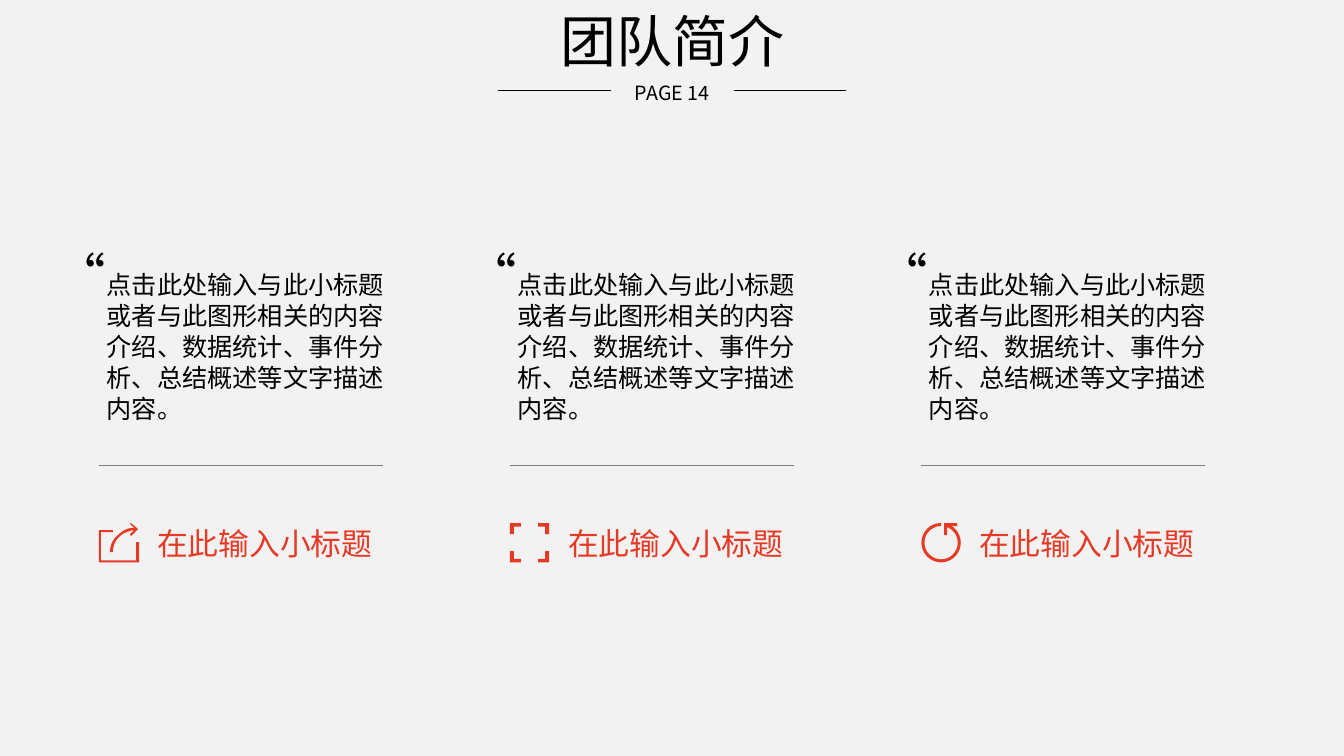
import math
from pptx import Presentation
from pptx.dml.color import RGBColor
from pptx.enum import shapes, text
from pptx.oxml import ns
from pptx.util import Cm, Pt
from lxml import etree

COLORS = {"paper": "F2F2F2", "ink": "000000", "rule": "808080", "accent": "E63A26"}
BODY_FONT = "Noto Sans CJK SC"
TITLE_FONT = "Noto Sans CJK JP"
LINE_RATIO = 1.22
ICON_GRID = 39
DESCRIPTION = "点击此处输入与此小标题或者与此图形相关的内容介绍、数据统计、事件分析、总结概述等文字描述内容。"
SUBTITLE = "在此输入小标题"


def rgb(name):
    return RGBColor.from_string(COLORS[name])


def style_run(run, size, color, font):
    run.font.size = Pt(size)
    run.font.color.rgb = rgb(color)
    run.font.name = font
    etree.SubElement(run.font._element, ns.qn("a:ea"), typeface=font)


def add_label(slide, box, wording, size, color="ink", wrap=True, align=text.PP_ALIGN.LEFT):
    label = slide.shapes.add_textbox(*box)
    frame = label.text_frame
    frame.text = wording
    frame.word_wrap = wrap
    frame.auto_size = text.MSO_AUTO_SIZE.SHAPE_TO_FIT_TEXT
    paragraph = frame.paragraphs[0]
    paragraph.alignment = align
    paragraph.line_spacing = Pt(round(size * LINE_RATIO, 1))
    style_run(paragraph.runs[0], size, color, BODY_FONT)


def add_rule(slide, left, top, width, color):
    rule = slide.shapes.add_connector(
        shapes.MSO_CONNECTOR.STRAIGHT, left, top, left + width, top)
    rule.line.color.rgb = rgb(color)
    rule.line.width = Pt(0.5)
    etree.SubElement(rule._element.spPr, ns.qn("a:effectLst"))


def curve(start, pull_out, pull_in, end, steps=12):
    points = []
    for step in range(steps + 1):
        t = step / steps
        weights = ((1 - t) ** 3, 3 * t * (1 - t) ** 2, 3 * t * t * (1 - t), t ** 3)
        corners = (start, pull_out, pull_in, end)
        points.append(tuple(sum(w * c[axis] for w, c in zip(weights, corners))
                            for axis in (0, 1)))
    return points


def arc(radius, first, last, steps=60):
    angles = [math.radians(first + (last - first) * i / steps) for i in range(steps + 1)]
    return [(20 + radius * math.cos(a), 19.5 + radius * math.sin(a)) for a in angles]


def share_icon():
    frame = [(0, 7), (14, 7), (14, 9), (2, 9), (2, 37), (37, 37),
             (37, 19), (40, 19), (40, 39), (0, 39)]
    arrow = ([(31, 1), (32, 0), (39, 6), (32, 13), (31, 11)]
             + curve((35, 7), (29, 8), (24, 10), (20, 14))
             + curve((20, 14), (16, 18), (14, 23), (14, 29))
             + curve((11, 29), (11, 22), (14, 16), (19, 12))
             + curve((19, 12), (23, 8), (28, 5), (33, 5))
             + [(35, 5)])
    return [frame, arrow]


def focus_icon():
    corner = [(0, 0), (11, 0), (11, 3.5), (4, 3.5), (4, 11), (0, 11)]
    return [[(abs(flip_x - x), abs(flip_y - y)) for x, y in corner]
            for flip_x in (0, ICON_GRID) for flip_y in (0, ICON_GRID)]


def refresh_icon():
    return [[(23, 0), (36, 0), (36, 3), (30, 3)] + arc(19.5, -52, 270)
            + arc(16.5, 270, -66) + [(26, 4), (26, 12), (23, 12)]]


def add_icon(slide, left, top, size, contours):
    unit = size / ICON_GRID
    scaled = [[(x * unit, y * unit) for x, y in contour] for contour in contours]
    builder = slide.shapes.build_freeform(*scaled[0][0], scale=1.0)
    builder.add_line_segments(scaled[0][1:], close=True)
    for contour in scaled[1:]:
        builder.move_to(*contour[0])
        builder.add_line_segments(contour[1:], close=True)
    icon = builder.convert_to_shape(left, top)
    icon.shadow.inherit = False
    icon.fill.solid()
    icon.fill.fore_color.rgb = rgb("accent")
    icon.line.fill.background()


def add_header(slide, left, top, width, height):
    title = slide.shapes.title
    title.left, title.top, title.width, title.height = left, top, width, height
    frame = title.text_frame
    frame.text = "团队简介"
    frame.word_wrap = False
    frame.auto_size = text.MSO_AUTO_SIZE.NONE
    frame.vertical_anchor = text.MSO_ANCHOR.MIDDLE
    paragraph = frame.paragraphs[0]
    paragraph.alignment = text.PP_ALIGN.CENTER
    paragraph.line_spacing = 0.9
    style_run(paragraph.runs[0], 40, "ink", TITLE_FONT)

    center = left + width // 2
    page_width, rule_width, rule_gap = Cm(4.83), Cm(2.84), Cm(1.55)
    add_label(slide, (center - page_width // 2, top + Cm(2), page_width, Cm(0.86)),
              "PAGE 14", 14, align=text.PP_ALIGN.CENTER)
    for rule_left in (center - rule_gap - rule_width, center + rule_gap):
        add_rule(slide, rule_left, top + Cm(2.38), rule_width, "ink")


def add_member_column(slide, left, top, width, contours):
    add_label(slide, (left - Cm(1.35), top, Cm(1.2), Cm(1.8)), "“", 36)
    add_label(slide, (left - Cm(0.05), top + Cm(0.64), Cm(8.03), Cm(4.11)), DESCRIPTION, 18)
    add_rule(slide, left, top + Cm(5.71), width, "rule")
    add_icon(slide, left, top + Cm(7.16), Cm(0.99), contours)
    add_label(slide, (left + Cm(1.22), top + Cm(7.06), Cm(6), Cm(1.2)),
              SUBTITLE, 22, "accent", wrap=False)


def main():
    deck = Presentation()
    deck.slide_width, deck.slide_height = Cm(33.87), Cm(19.05)
    slide = deck.slides.add_slide(deck.slide_layouts[5])
    slide.background.fill.solid()
    slide.background.fill.fore_color.rgb = rgb("paper")

    add_header(slide, Cm(11.53), Cm(-0.1), Cm(10.82), Cm(2.44))
    for index, contours in enumerate((share_icon(), focus_icon(), refresh_icon())):
        add_member_column(slide, Cm(2.49) + index * Cm(10.36), Cm(6.02), Cm(7.16), contours)

    deck.save("out.pptx")


if __name__ == "__main__":
    main()
